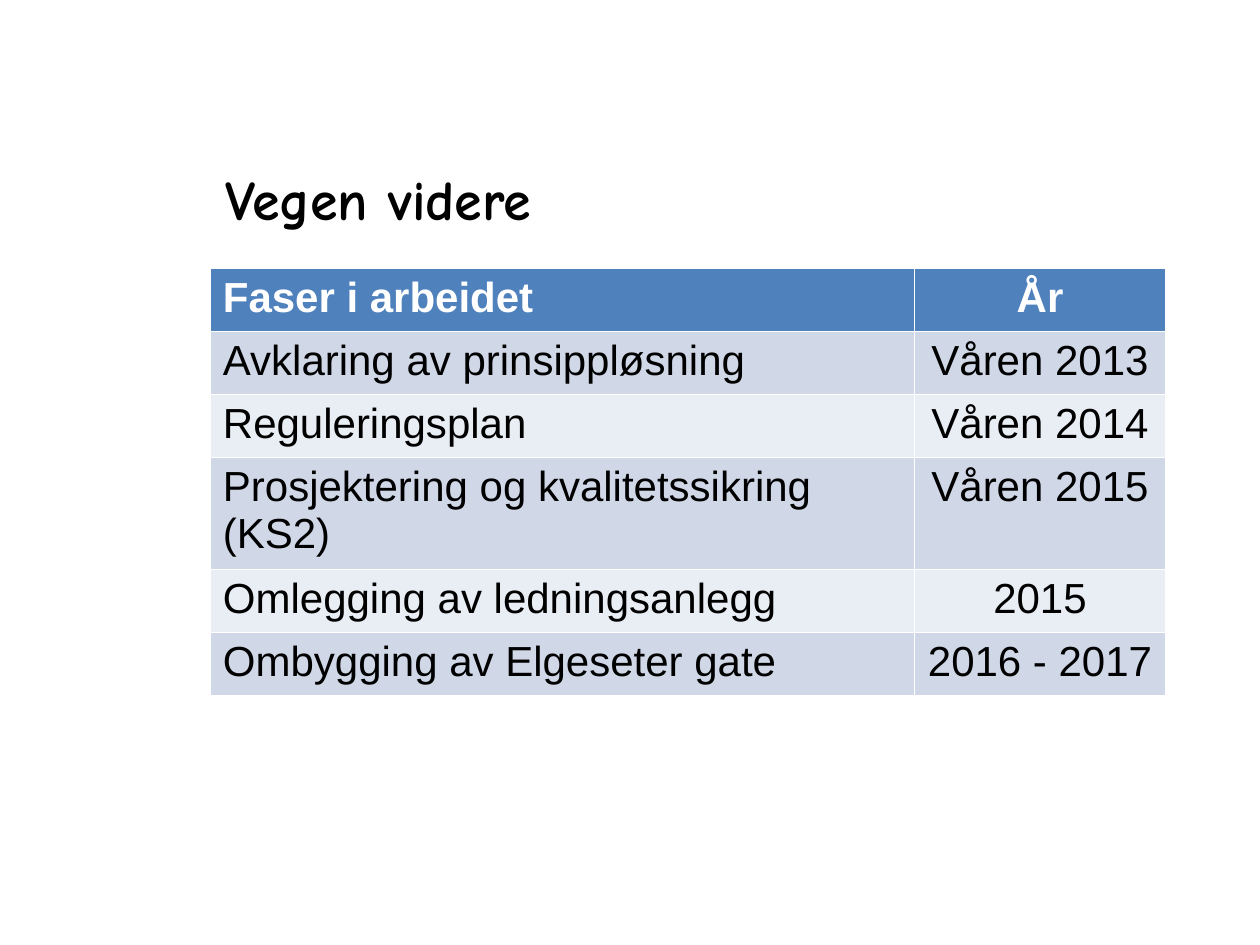
"""Build a slide with the project phases and their planned years."""
from pptx import Presentation
from pptx.dml.color import RGBColor
from pptx.enum.text import MSO_ANCHOR, PP_ALIGN
from pptx.util import Cm, Pt

COLORS = {
    "text": "000000",
    "header_text": "FFFFFF",
    "header": "4F81BD",
    "odd_row": "D0D8E8",
    "even_row": "E9EDF4",
}
PHASES = [
    ("Faser i arbeidet", "År"),
    ("Avklaring av prinsippløsning", "Våren 2013"),
    ("Reguleringsplan", "Våren 2014"),
    ("Prosjektering og kvalitetssikring (KS2)", "Våren 2015"),
    ("Omlegging av ledningsanlegg", "2015"),
    ("Ombygging av Elgeseter gate", "2016 - 2017"),
]
COLUMN_WIDTHS = (14.2, 5.05)
ROW_HEIGHTS = (1.27, 1.27, 1.27, 2.26, 1.27, 1.27)


class SlideBuilder:
    def __init__(self, slide, title_font="Comic Neue", body_font="Arial"):
        self.slide = slide
        self.title_font = title_font
        self.body_font = body_font

    def style(self, paragraph, font_name, size, color, bold, alignment):
        paragraph.alignment = alignment
        font = paragraph.font
        font.name = font_name
        font.size = Pt(size)
        font.bold = bold
        font.color.rgb = RGBColor.from_string(COLORS[color])

    def title(self, text, left, top, width, height):
        heading = self.slide.shapes.title
        heading.left, heading.top = Cm(left), Cm(top)
        heading.width, heading.height = Cm(width), Cm(height)
        frame = heading.text_frame
        frame.text = text
        frame.word_wrap = True
        frame.vertical_anchor = MSO_ANCHOR.TOP
        self.style(frame.paragraphs[0], self.title_font, 32, "text", True, PP_ALIGN.LEFT)

    def table(self, rows, left, top, widths, heights):
        schedule = self.slide.shapes.add_table(
            len(rows), len(widths), Cm(left), Cm(top), Cm(sum(widths)), Cm(sum(heights))
        ).table
        for column, width in zip(schedule.columns, widths):
            column.width = Cm(width)
        for row, height in zip(schedule.rows, heights):
            row.height = Cm(height)
        for row_index, values in enumerate(rows):
            is_header = row_index == 0
            fill = "header" if is_header else "odd_row" if row_index % 2 else "even_row"
            color = "header_text" if is_header else "text"
            for column_index, value in enumerate(values):
                cell = schedule.cell(row_index, column_index)
                cell.text = value
                cell.fill.solid()
                cell.fill.fore_color.rgb = RGBColor.from_string(COLORS[fill])
                alignment = PP_ALIGN.CENTER if column_index else PP_ALIGN.LEFT
                self.style(cell.text_frame.paragraphs[0], self.body_font, 24,
                           color, is_header, alignment)


def main():
    presentation = Presentation()
    presentation.slide_width, presentation.slide_height = Cm(25.4), Cm(19.05)
    builder = SlideBuilder(presentation.slides.add_slide(presentation.slide_layouts[5]))
    builder.title("Vegen videre", 4.29, 3.18, 7.62, 1.63)
    builder.table(PHASES, 4.24, 5.41, COLUMN_WIDTHS, ROW_HEIGHTS)
    presentation.save("out.pptx")


if __name__ == "__main__":
    main()
